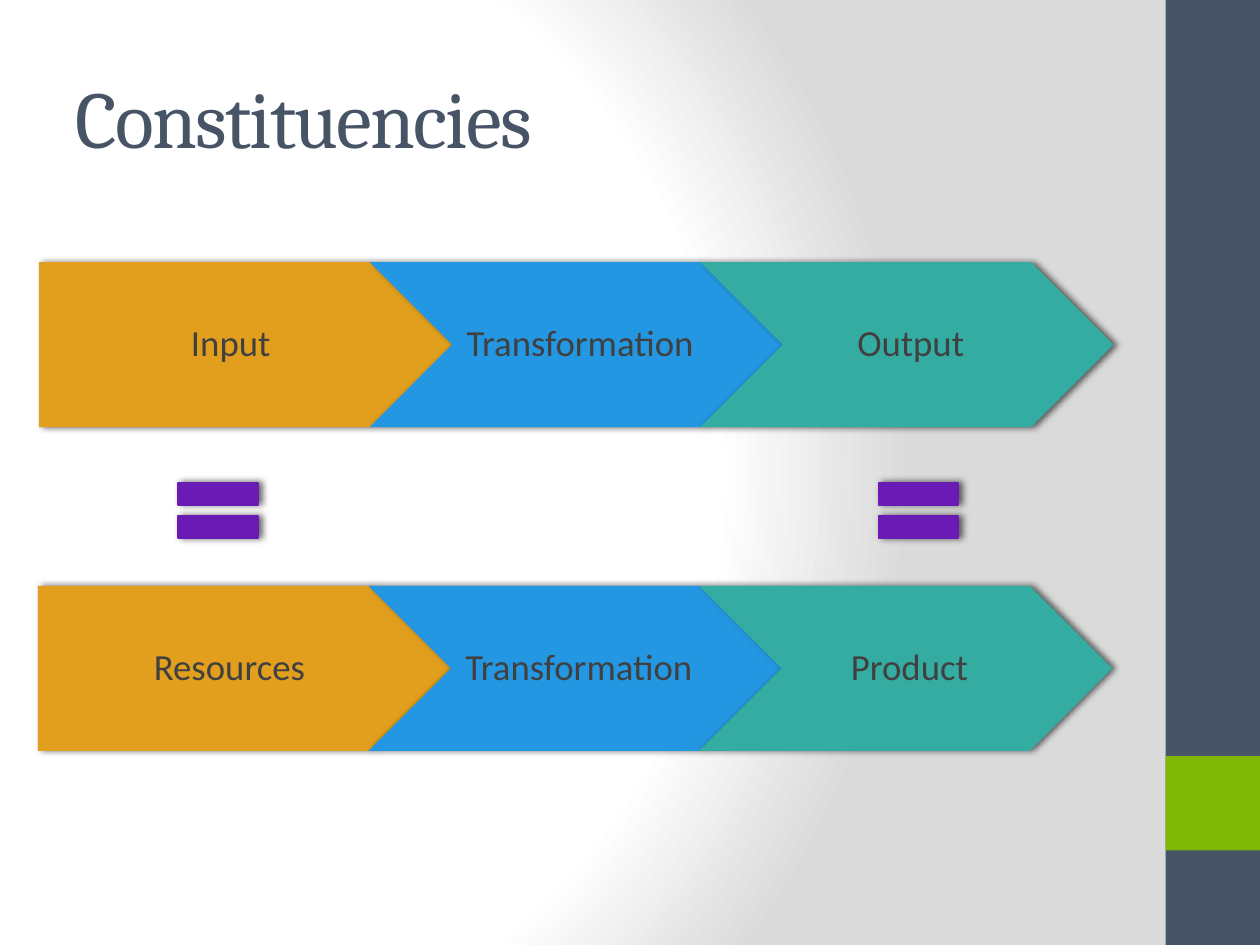
from lxml import etree
from pptx import Presentation
from pptx.dml.color import RGBColor
from pptx.enum.shapes import MSO_SHAPE
from pptx.enum.text import MSO_ANCHOR, PP_ALIGN
from pptx.oxml import parse_xml
from pptx.oxml.ns import nsdecls, qn
from pptx.util import Inches, Pt

RECT = MSO_SHAPE.RECTANGLE
PENTAGON = MSO_SHAPE.PENTAGON
CHEVRON = MSO_SHAPE.CHEVRON
EQUAL = MSO_SHAPE.MATH_EQUAL
MIDDLE = MSO_ANCHOR.MIDDLE
CENTER = PP_ALIGN.CENTER

SLATE = RGBColor(0x46, 0x54, 0x66)
GREEN = RGBColor(0x80, 0xB6, 0x06)
AMBER = RGBColor(0xE2, 0x9F, 0x1D)
BLUE = RGBColor(0x23, 0x97, 0xE2)
TEAL = RGBColor(0x35, 0xAC, 0xA2)
PURPLE = RGBColor(0x6A, 0x1B, 0xB4)
DARK_GRAY = RGBColor(0x40, 0x40, 0x40)

STEP_WIDTH, STEP_HEIGHT = 3.28, 1.31
STEP_PITCH = 0.8 * STEP_WIDTH
STEP_COLORS = (AMBER, BLUE, TEAL)
PROCESSES = (
    (0.31, 2.08, ("Input", "Transformation", "Output")),
    (0.30, 4.65, ("Resources", "Transformation", "Product")),
)


class SlideBuilder:
    title_font = "Cambria"
    body_font = "Calibri"

    def __init__(self, slide):
        self.slide = slide

    def background(self):
        """Fill the background with a circular white-to-gray gradient."""
        self.slide.background.fill.gradient()
        grad = self.slide.element.find(".//" + qn("a:gradFill"))
        grad.getparent().replace(grad, parse_xml(
            f'<a:gradFill {nsdecls("a")} rotWithShape="1"><a:gsLst>'
            '<a:gs pos="0"><a:srgbClr val="FFFFFF"/></a:gs>'
            '<a:gs pos="75000"><a:srgbClr val="FFFFFF"/></a:gs>'
            '<a:gs pos="100000"><a:srgbClr val="DADADA"/></a:gs></a:gsLst>'
            '<a:path path="circle">'
            '<a:fillToRect l="20000" t="50000" r="100000" b="50000"/>'
            '</a:path></a:gradFill>'))

    def shape(self, shapes, kind, x, y, w, h, color):
        sp = shapes.add_shape(kind, Inches(x), Inches(y), Inches(w), Inches(h))
        sp.shadow.inherit = False
        sp.fill.solid()
        sp.fill.fore_color.rgb = color
        sp.line.fill.background()
        return sp

    def bar(self, y, h, color):
        self.shape(self.slide.shapes, RECT, 9.25, y, 0.75, h, color)

    def cast_shadow(self, sp):
        effects = sp.element.spPr.find(qn("a:effectLst"))
        shadow = etree.SubElement(
            effects, qn("a:outerShdw"), blurRad=str(Pt(4)), dist=str(Pt(2)),
            dir="0", rotWithShape="0")
        color = etree.SubElement(shadow, qn("a:srgbClr"), val="000000")
        etree.SubElement(color, qn("a:alpha"), val="60000")

    def set_text(self, tf, text, font, size, color):
        tf.word_wrap = True
        tf.vertical_anchor = MIDDLE
        tf.text = text
        r = tf.paragraphs[0].runs[0]
        r.font.name = font
        r.font.size = Pt(size)
        r.font.color.rgb = color
        return r

    def title(self, text):
        sp = self.slide.shapes.add_textbox(
            Inches(0.5), Inches(0.3), Inches(8.33), Inches(1.25))
        r = self.set_text(sp.text_frame, text, self.title_font, 46, SLATE)
        r._r.get_or_add_rPr().set("spc", "-100")

    def process(self, x, y, labels):
        """Draw a grouped row of interlocking arrows."""
        shapes = self.slide.shapes.add_group_shape().shapes
        for i, (label, color) in enumerate(zip(labels, STEP_COLORS)):
            sp = self.shape(shapes, CHEVRON if i else PENTAGON,
                            x + i * STEP_PITCH, y, STEP_WIDTH, STEP_HEIGHT, color)
            self.cast_shadow(sp)
            tf = sp.text_frame
            tf.margin_left = Inches(0.09 if i else 0.12)
            tf.margin_right = Inches(0.03)
            tf.margin_top = tf.margin_bottom = Inches(0.06)
            self.set_text(tf, label, self.body_font, 21, DARK_GRAY)
            p = tf.paragraphs[0]
            p.alignment = CENTER
            p.line_spacing = 0.9

    def equal_sign(self, x):
        sp = self.shape(self.slide.shapes, EQUAL, x, 3.68, 0.86, 0.74, PURPLE)
        sp.line.color.rgb = PURPLE
        sp.line.width = Pt(1)
        self.cast_shadow(sp)


def main():
    prs = Presentation()
    prs.slide_width, prs.slide_height = Inches(10), Inches(7.5)
    s = SlideBuilder(prs.slides.add_slide(prs.slide_layouts[6]))
    s.background()
    s.bar(0, 7.5, SLATE)
    s.bar(6, 0.75, GREEN)
    s.title("Constituencies")
    for x, y, labels in PROCESSES:
        s.process(x, y, labels)
    for x in (1.3, 6.86):
        s.equal_sign(x)
    prs.save("out.pptx")


if __name__ == "__main__":
    main()
